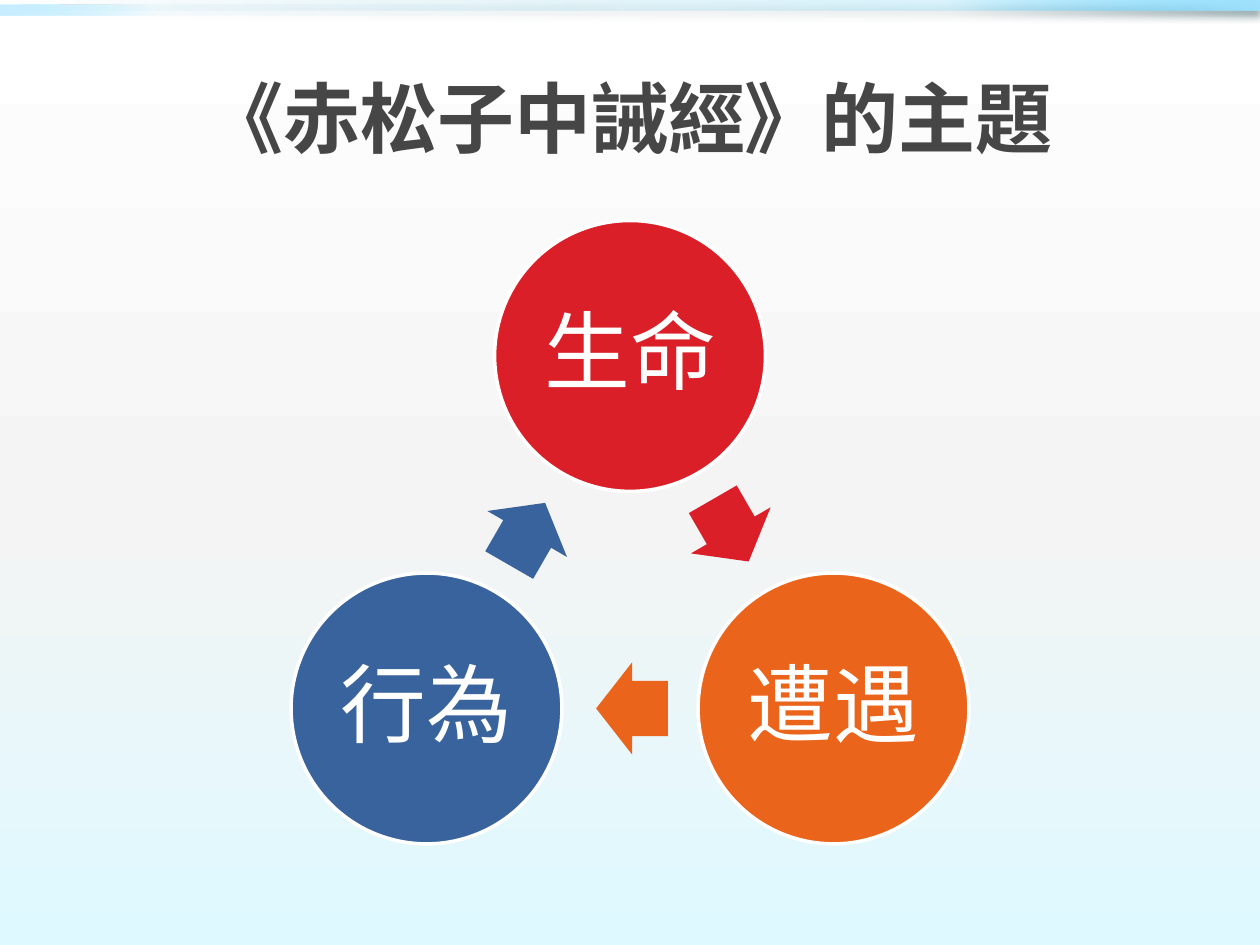
from math import cos, radians, sin

from lxml.etree import SubElement
from pptx import Presentation
from pptx.dml.color import RGBColor
from pptx.enum.shapes import MSO_SHAPE
from pptx.enum.text import MSO_ANCHOR, PP_ALIGN
from pptx.oxml.ns import qn
from pptx.util import Inches, Pt

TITLE = "《赤松子中誡經》的主題"
CYCLE = [("生命", "DA1F28"), ("遭遇", "EB641B"), ("行為", "39639D")]

THEME = {
    "title": {"name": "Roboto", "size": Pt(44), "bold": True, "color": "464646"},
    "node": {"name": "Cambria", "size": Pt(49), "bold": False, "color": "FFFFFF"},
    "outline": "FFFFFF",
    "shadow": "0F3A44",
    # Gradient stops: position %, colour, opacity %
    "background": [(0, "FFFFFF", 100), (55, "F4F4F4", 100), (100, "DEF9FF", 100)],
    "wide_band": [(0, "008CAF", 0), (75, "52D0FF", 20), (100, "A1E3FF", 100)],
    "short_band": [(0, "008CAF", 0), (75, "52D0FF", 5), (100, "A1E3FF", 60)],
}

RING_X, RING_Y, RING_RADIUS = 5, 4.69, 1.865
NODE_SIZE = 2.15
ARROW_LENGTH, ARROW_BREADTH = 0.57, 0.73
ARROW_POSITION = 0.495  # share of the way from one node to the next


def add_color(parent, color, opacity):
    element = SubElement(parent, qn("a:srgbClr"), val=color)
    if opacity < 100:
        SubElement(element, qn("a:alpha"), val=str(opacity * 1000))


def set_gradient(fill, properties, stops, angle):
    """Fill with any number of stops; angle runs clockwise from left to right."""
    fill.gradient()
    gradient = properties.find(".//" + qn("a:gradFill"))
    for child in list(gradient):
        gradient.remove(child)
    stop_list = SubElement(gradient, qn("a:gsLst"))
    for position, color, opacity in stops:
        stop = SubElement(stop_list, qn("a:gs"), pos=str(position * 1000))
        add_color(stop, color, opacity)
    SubElement(gradient, qn("a:lin"), ang=str(angle * 60000), scaled="1")


def add_plain_shape(slide, kind, left, top, width, height):
    shape = slide.shapes.add_shape(
        kind, Inches(left), Inches(top), Inches(width), Inches(height))
    shape.shadow.inherit = False
    shape.line.fill.background()
    return shape


def add_centred_shape(slide, kind, center, width, height, color):
    shape = add_plain_shape(slide, kind, center[0] - width / 2,
                            center[1] - height / 2, width, height)
    shape.fill.solid()
    shape.fill.fore_color.rgb = RGBColor.from_string(color)
    return shape


def add_band(slide, top, width, stops, angle):
    band = add_plain_shape(slide, MSO_SHAPE.RECTANGLE, 0, top, width, 0.08)
    set_gradient(band.fill, band._element.spPr, stops, angle)
    return band


def add_shadow(shape):
    effects = shape._element.spPr.find(qn("a:effectLst"))
    shadow = SubElement(effects, qn("a:outerShdw"), blurRad=str(Pt(4.5)),
                        dist=str(Pt(3)), dir="5400000", rotWithShape="0")
    add_color(shadow, THEME["shadow"], 48)


def write(shape, text, style):
    frame = shape.text_frame
    frame.vertical_anchor = MSO_ANCHOR.MIDDLE
    paragraph = frame.paragraphs[0]
    paragraph.alignment = PP_ALIGN.CENTER
    run = paragraph.add_run()
    run.text = text
    for attribute in ("name", "size", "bold"):
        setattr(run.font, attribute, style[attribute])
    run.font.color.rgb = RGBColor.from_string(style["color"])
    return frame


def add_title(slide):
    box = slide.shapes.add_textbox(Inches(0.5), Inches(0.3), Inches(9), Inches(1.25))
    write(box, TITLE, THEME["title"]).word_wrap = True


def add_node(slide, center, text, color):
    node = add_centred_shape(slide, MSO_SHAPE.OVAL, center, NODE_SIZE, NODE_SIZE, color)
    node.line.color.rgb = RGBColor.from_string(THEME["outline"])
    node.line.width = Pt(2)
    frame = write(node, text, THEME["node"])
    frame.word_wrap = False
    frame.paragraphs[0].line_spacing = 0.9
    for side in ("left", "top", "right", "bottom"):
        setattr(frame, f"margin_{side}", Inches(0.07))


def add_cycle(slide):
    step = 360 / len(CYCLE)
    centers = [(RING_X + RING_RADIUS * sin(radians(step * index)),
                RING_Y - RING_RADIUS * cos(radians(step * index)))
               for index in range(len(CYCLE))]
    for index, (text, color) in enumerate(CYCLE):
        start, end = centers[index], centers[(index + 1) % len(CYCLE)]
        add_node(slide, start, text, color)
        middle = [a + (b - a) * ARROW_POSITION for a, b in zip(start, end)]
        arrow = add_centred_shape(slide, MSO_SHAPE.RIGHT_ARROW, middle,
                                  ARROW_LENGTH, ARROW_BREADTH, color)
        arrow.adjustments[0] = 0.6
        arrow.adjustments[1] = 0.5
        arrow.rotation = step * (index + 0.5)


def main():
    presentation = Presentation()
    presentation.slide_width, presentation.slide_height = Inches(10), Inches(7.5)
    slide = presentation.slides.add_slide(presentation.slide_layouts[6])
    set_gradient(slide.background.fill, slide._element, THEME["background"], 90)
    add_shadow(add_band(slide, 0, 10, THEME["wide_band"], 315))
    add_band(slide, 0.04, 5, THEME["short_band"], 135)
    add_title(slide)
    add_cycle(slide)
    presentation.save("out.pptx")


if __name__ == "__main__":
    main()
